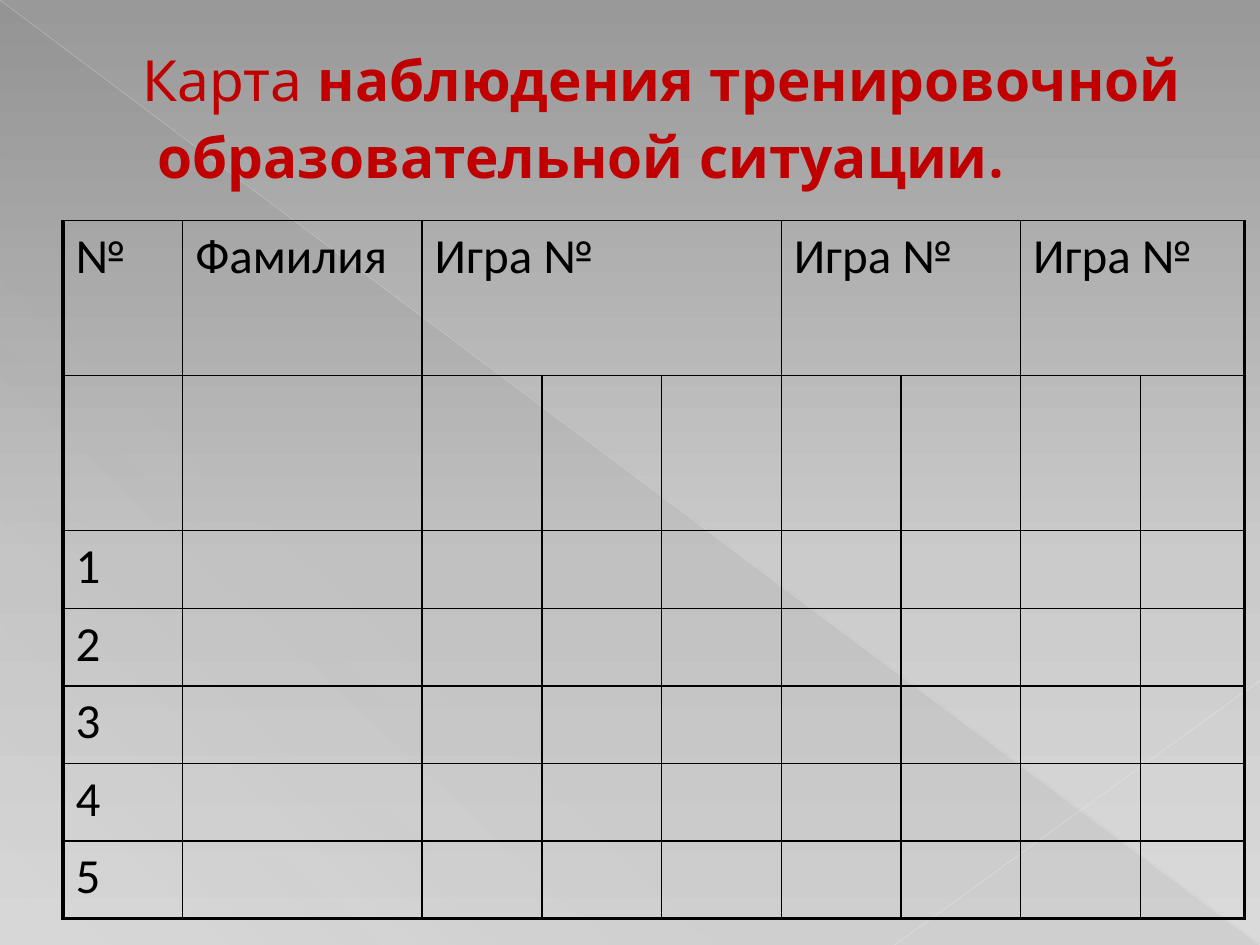
from lxml import etree
from pptx import Presentation
from pptx import util as u
from pptx.dml import color as dml
from pptx.enum import shapes, text
from pptx.oxml import ns

WIDTH, HEIGHT = 10, 7.5
GAME = "Игра №"
COLUMN_UNITS = [1, 2, 1, 1, 1, 1, 1, 1, 0.87]
ROW_UNITS = [2, 2, 1, 1, 1, 1, 1]
GAME_SPANS = [(2, 4), (5, 6), (7, 8)]  # first and last column of each game


def color(value):
    return dml.RGBColor.from_string(value)


def add_node(parent, tag, **attributes):
    return etree.SubElement(parent, ns.qn(tag), {k: str(v) for k, v in attributes.items()})


def add_color(parent, value, alpha=100):
    node = add_node(parent, "a:srgbClr", val=value)
    if alpha < 100:
        add_node(node, "a:alpha", val=alpha * 1000)


def set_format(target, values):
    for name, value in values.items():
        setattr(target, name, value)


class ObservationSlide:
    ink = "000000"
    accent = "C00000"
    title_font = "Quicksand"
    table_font = "Calibri"
    thin, thick = 1, 2.25

    def __init__(self, deck):
        self.slide = deck.slides.add_slide(deck.slide_layouts[5])

    def box(self, *shares):
        """Turn shares of the slide's width and height into lengths."""
        return [u.Inches(round(share * side, 2))
                for share, side in zip(shares, (WIDTH, HEIGHT) * 2)]

    def gradient(self, owner, fill, stops, angle):
        fill.gradient()
        fill.gradient_angle = 360 - angle
        stop_list = next(owner.iter(ns.qn("a:gsLst")))
        for old in list(stop_list):
            stop_list.remove(old)
        for position, *paint in stops:
            add_color(add_node(stop_list, "a:gs", pos=position * 1000), *paint)

    def background(self, stops, angle):
        self.gradient(self.slide.element, self.slide.background.fill, stops, angle)

    def triangle(self, area, stops, angle):
        shade = self.slide.shapes.add_shape(
            shapes.MSO_SHAPE.RIGHT_TRIANGLE, *self.box(*area))
        shade.shadow.inherit = False
        shade.line.fill.background()
        self.gradient(shade.element, shade.fill, stops, angle)

    def ray(self, ends, value, width, alpha):
        ray = self.slide.shapes.add_connector(
            shapes.MSO_CONNECTOR.STRAIGHT, *self.box(*ends))
        ray.line.width = u.Pt(width)
        ray.line.color.rgb = color(value)
        properties = ray.element.spPr
        paint = next(properties.iter(ns.qn("a:srgbClr")))
        add_node(paint, "a:alpha", val=alpha * 1000)
        add_node(properties, "a:effectLst")

    def add_words(self, paragraph, words, value, font_format):
        run = paragraph.add_run()
        run.text = words
        run.font.color.rgb = color(value)
        set_format(run.font, font_format)

    def title(self, area, runs):
        heading = self.slide.shapes.title
        heading.element.getparent().append(heading.element)  # bring to front
        set_format(heading, dict(zip(("left", "top", "width", "height"), self.box(*area))))
        frame = heading.text_frame
        set_format(frame, {"auto_size": text.MSO_AUTO_SIZE.NONE, "word_wrap": True,
                           "vertical_anchor": text.MSO_ANCHOR.MIDDLE, "margin_right": 0})
        line = frame.paragraphs[0]
        line.alignment = text.PP_ALIGN.LEFT
        indents = line._p.get_or_add_pPr()
        indents.set("marL", str(u.Inches(0.65)))
        indents.set("indent", str(u.Inches(-0.12)))
        for words, size, bold in runs:
            self.add_words(line, words, self.accent,
                           {"size": u.Pt(size), "bold": bold, "name": self.title_font})

    def borders(self, cell, widths):
        properties = cell._tc.get_or_add_tcPr()
        for side, width in zip("LRTB", widths):
            edge = add_node(properties, f"a:ln{side}", w=u.Pt(width))
            add_color(add_node(edge, "a:solidFill"), self.ink)

    def table(self, area, column_units, row_units, labels, spans):
        left, top, width, height = self.box(*area)
        rows, columns = len(row_units), len(column_units)
        grid = self.slide.shapes.add_table(rows, columns, left, top, width, height).table
        grid.first_row = grid.horz_banding = False
        for column, units in zip(grid.columns, column_units):
            column.width = int(width * units / sum(column_units))
        for row, units in zip(grid.rows, row_units):
            row.height = int(height * units / sum(row_units))

        # Thick outer edges left, right and below; a merged cell ends at its last column
        ends = {(0, first): last for first, last in spans}
        for r in range(rows):
            for c in range(columns):
                cell = grid.cell(r, c)
                outer = (c == 0, ends.get((r, c), c) == columns - 1, False, r == rows - 1)
                self.borders(cell, [self.thick if edge else self.thin for edge in outer])
                cell.fill.background()
        for first, last in spans:
            grid.cell(0, first).merge(grid.cell(0, last))
        for place, words in labels.items():
            self.add_words(grid.cell(*place).text_frame.paragraphs[0], words, self.ink,
                           {"size": u.Pt(28), "name": self.table_font})


def main():
    deck = Presentation()
    deck.slide_width, deck.slide_height = u.Inches(WIDTH), u.Inches(HEIGHT)
    card = ObservationSlide(deck)

    # Backdrop
    card.background([(0, "999999"), (60, "CBCBCB"), (100, "DADADA")], 90)
    card.triangle((0, 0, 1, 1),
                  [(0, "666666", 10), (70, "666666", 8), (100, "666666", 1)], 133)
    card.ray((0, 0, 1, 1), "E8E8E8", 0.39, 35)
    card.ray((1, 0.72, 0.71, 1), "EAEAEA", 0.47, 45)

    # Heading
    card.title((0.05, 0.04, 0.9, 0.17), [
        ("Карта ", 32.4, False),
        ("наблюдения тренировочной образовательной ситуации", 32.4, True),
        (".", 37.8, True)])

    # Observation table
    labels = {(0, 0): "№", (0, 1): "Фамилия"}
    labels.update({(0, first): GAME for first, _ in GAME_SPANS})
    labels.update({(number + 1, 0): str(number) for number in range(1, 6)})
    card.table((0.05, 0.233, 0.938, 0.739), COLUMN_UNITS, ROW_UNITS, labels, GAME_SPANS)

    deck.save("out.pptx")


if __name__ == "__main__":
    main()
